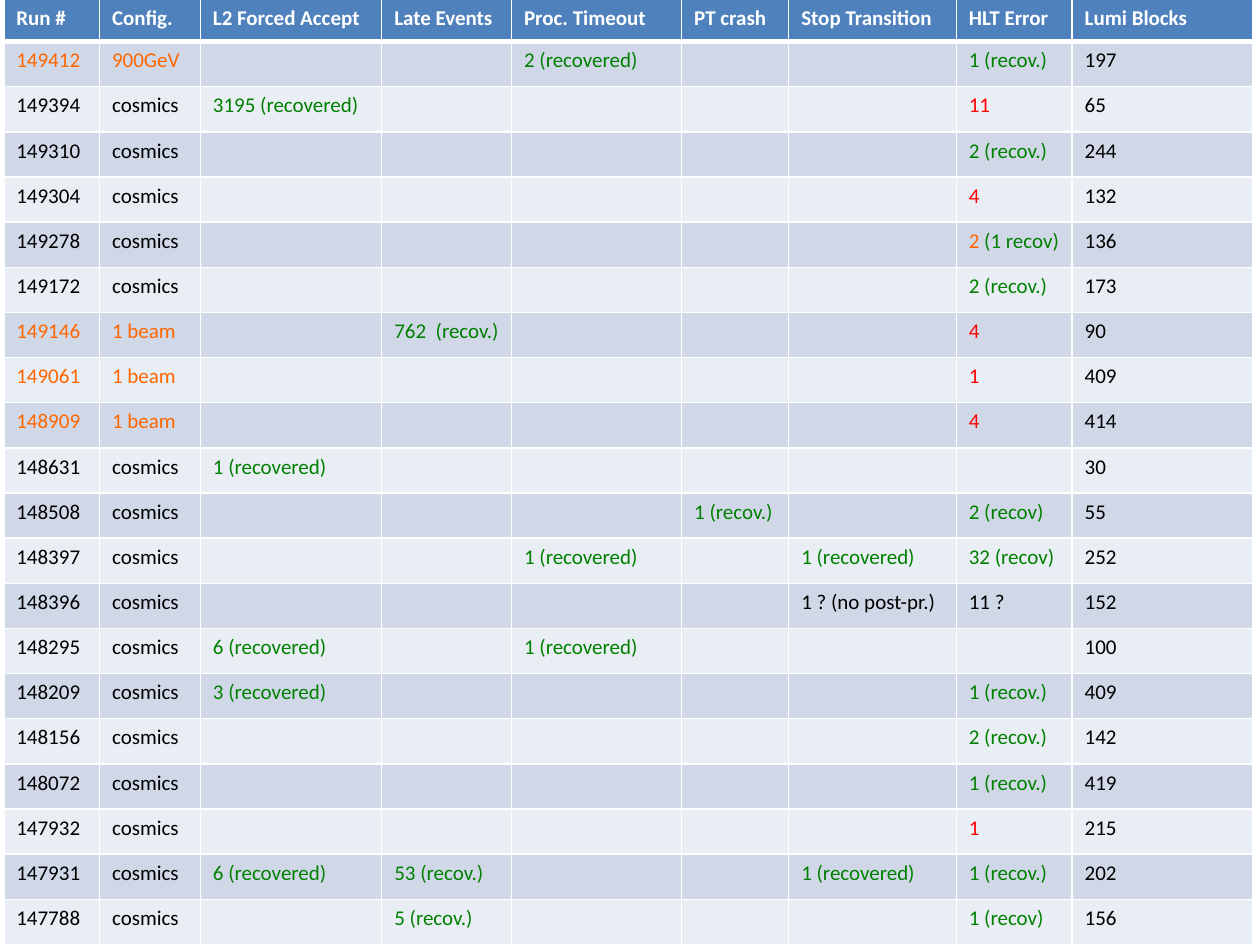
from lxml import etree
from pptx import Presentation
from pptx.dml.color import RGBColor
from pptx.oxml.ns import qn
from pptx.util import Inches, Pt

SLIDE_WIDTH, SLIDE_HEIGHT = 10, 7.5
TABLE_BOX = (0.03, -0.01, 9.91, 7.51)
HEADER_HEIGHT = 0.34
FONT, FONT_SIZE = "Calibri", 12
WHITE, BLACK, BLUE = "FFFFFF", "000000", "4F81BD"
ORANGE, GREEN, RED = "FF6600", "008000", "FF0000"
BANDS = ("D0D8E8", "E9EDF4")
THIN, THICK = 1, 3

COLUMNS = {
    "Run #": 0.76,
    "Config.": 0.8,
    "L2 Forced Accept": 1.44,
    "Late Events": 1.03,
    "Proc. Timeout": 1.35,
    "PT crash": 0.85,
    "Stop Transition": 1.33,
    "HLT Error": 0.92,
    "Lumi Blocks": 1.43,
}
ACCEPT, LATE, TIMEOUT, CRASH, STOP, HLT = list(COLUMNS)[2:8]

RUNS = [
    ("149412", "900GeV", "197", {TIMEOUT: "2 (recovered)", HLT: "1 (recov.)"}),
    ("149394", "cosmics", "65", {ACCEPT: "3195 (recovered)", HLT: "11"}),
    ("149310", "cosmics", "244", {HLT: "2 (recov.)"}),
    ("149304", "cosmics", "132", {HLT: "4"}),
    ("149278", "cosmics", "136", {HLT: "2 (1 recov)"}),
    ("149172", "cosmics", "173", {HLT: "2 (recov.)"}),
    ("149146", "1 beam", "90", {LATE: "762  (recov.)", HLT: "4"}),
    ("149061", "1 beam", "409", {HLT: "1"}),
    ("148909", "1 beam", "414", {HLT: "4"}),
    ("148631", "cosmics", "30", {ACCEPT: "1 (recovered)"}),
    ("148508", "cosmics", "55", {CRASH: "1 (recov.)", HLT: "2 (recov)"}),
    ("148397", "cosmics", "252",
     {TIMEOUT: "1 (recovered)", STOP: "1 (recovered)", HLT: "32 (recov)"}),
    ("148396", "cosmics", "152", {STOP: "1 ? (no post-pr.)", HLT: "11 ?"}),
    ("148295", "cosmics", "100", {ACCEPT: "6 (recovered)", TIMEOUT: "1 (recovered)"}),
    ("148209", "cosmics", "409", {ACCEPT: "3 (recovered)", HLT: "1 (recov.)"}),
    ("148156", "cosmics", "142", {HLT: "2 (recov.)"}),
    ("148072", "cosmics", "419", {HLT: "1 (recov.)"}),
    ("147932", "cosmics", "215", {HLT: "1"}),
    ("147931", "cosmics", "202",
     {ACCEPT: "6 (recovered)", LATE: "53 (recov.)", STOP: "1 (recovered)", HLT: "1 (recov.)"}),
    ("147788", "cosmics", "156", {LATE: "5 (recov.)", HLT: "1 (recov)"}),
]


def color(value):
    """Turn a hex string into a colour."""
    return RGBColor.from_string(value)


def add_text(paragraph, text, fill=BLACK, size=FONT_SIZE, bold=False):
    """Append one formatted run to a paragraph."""
    run = paragraph.add_run()
    run.text = text
    run.font.name = FONT
    run.font.size = Pt(size)
    run.font.bold = bold
    run.font.color.rgb = color(fill)


def set_borders(cell, top=THIN, bottom=THIN):
    """Draw white lines on the four sides of a cell."""
    properties = cell._tc.get_or_add_tcPr()
    for side, width in (("L", THIN), ("R", THIN), ("T", top), ("B", bottom)):
        line = etree.SubElement(properties, qn(f"a:ln{side}"), w=str(Pt(width)))
        solid = etree.SubElement(line, qn("a:solidFill"))
        etree.SubElement(solid, qn("a:srgbClr"), val=WHITE)


def fill_cell(cell, parts, background, bold=False, **borders):
    """Style a cell and write its (text, colour) parts."""
    set_borders(cell, **borders)
    cell.fill.solid()
    cell.fill.fore_color.rgb = color(background)
    paragraph = cell.text_frame.paragraphs[0]
    for text, fill in parts:
        add_text(paragraph, text, fill=fill, bold=bold)
    if not parts:
        etree.SubElement(paragraph._p, qn("a:endParaRPr"), sz=str(FONT_SIZE * 100))


def error_parts(text):
    """Colour an error count by how far it was recovered."""
    if not text:
        return []
    count, bracket, note = text.partition("(")
    if note.startswith("1 recov"):
        return [(count, ORANGE), (bracket + note, GREEN)]
    if "recov" in note:
        return [(text, GREEN)]
    return [(text, RED if text.isdigit() else BLACK)]


def run_parts(run_number, config, lumi_blocks, errors):
    """Return the coloured parts of every cell in a run's row."""
    run_color = BLACK if config == "cosmics" else ORANGE
    counts = [error_parts(errors.get(name)) for name in (ACCEPT, LATE, TIMEOUT, CRASH, STOP, HLT)]
    return [[(run_number, run_color)], [(config, run_color)], *counts, [(lumi_blocks, BLACK)]]


def add_run_table(slide, left, top, width, height):
    """Place the table of runs in the given box."""
    frame = slide.shapes.add_table(
        len(RUNS) + 1, len(COLUMNS), Inches(left), Inches(top), Inches(width), Inches(height))
    table = frame.table
    total = sum(COLUMNS.values())
    for column, share in zip(table.columns, COLUMNS.values()):
        column.width = Inches(width * share / total)
    for row in table.rows:
        row.height = Inches((height - HEADER_HEIGHT) / len(RUNS))
    table.rows[0].height = Inches(HEADER_HEIGHT)
    for cell, name in zip(table.rows[0].cells, COLUMNS):
        fill_cell(cell, [(name, WHITE)], BLUE, bold=True, bottom=THICK)
    for index, run in enumerate(RUNS):
        for cell, parts in zip(table.rows[index + 1].cells, run_parts(*run)):
            fill_cell(cell, parts, BANDS[index % 2], top=THIN if index else THICK)


def main():
    """Build and save the presentation."""
    presentation = Presentation()
    presentation.slide_width = Inches(SLIDE_WIDTH)
    presentation.slide_height = Inches(SLIDE_HEIGHT)
    slide = presentation.slides.add_slide(presentation.slide_layouts[6])
    add_run_table(slide, *TABLE_BOX)
    presentation.save("out.pptx")


if __name__ == "__main__":
    main()
